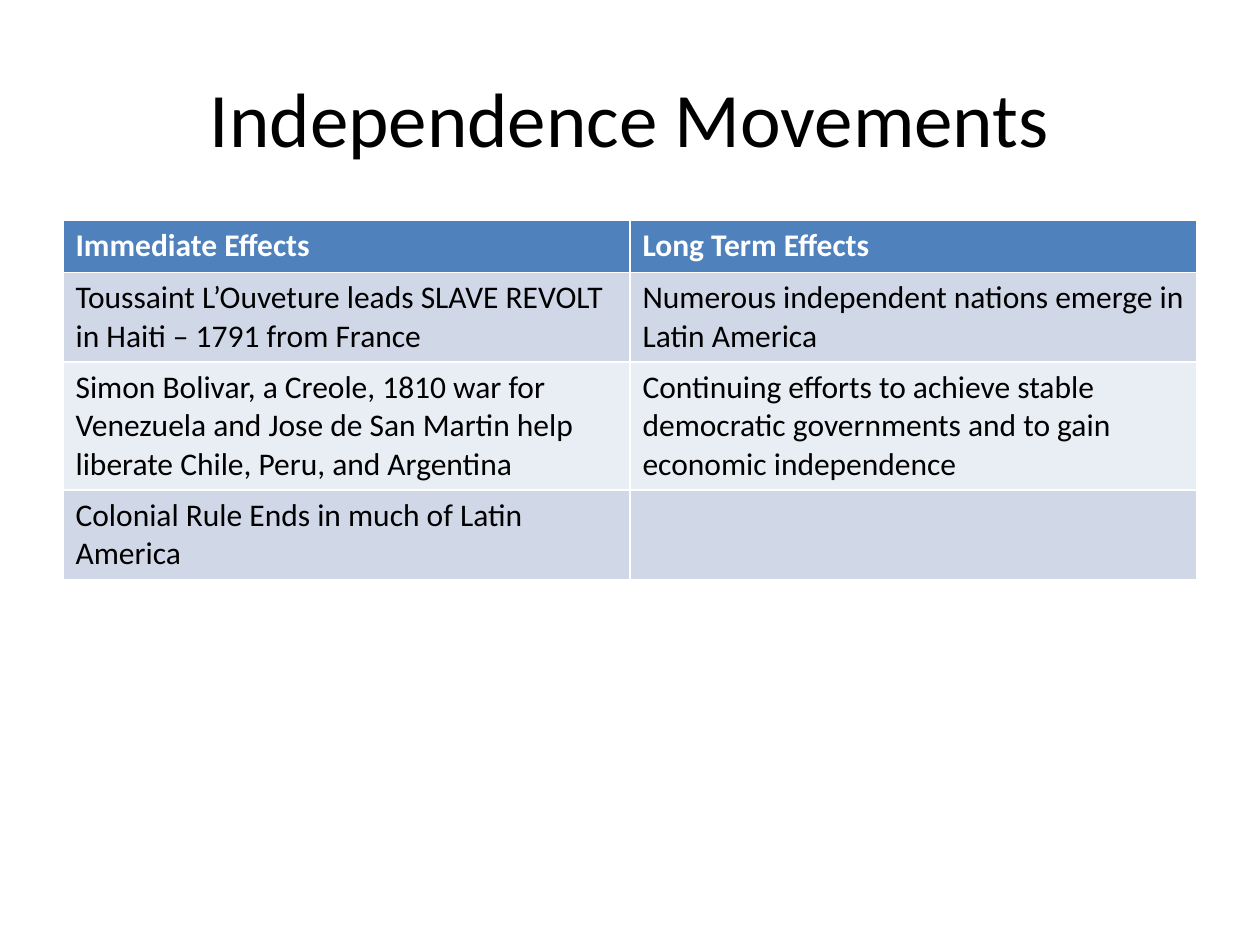
from pptx import Presentation
from pptx import util as u
from pptx.dml.color import RGBColor
from pptx.enum import text

HUES = {"head": "4F81BD", "odd": "D0D8E8", "even": "E9EDF4",
        "ink": "000000", "white": "FFFFFF"}
ROWS = [
    ("Immediate Effects", "Long Term Effects"),
    ("Toussaint L’Ouveture leads SLAVE REVOLT in Haiti – 1791 from France",
     "Numerous independent nations emerge in Latin America"),
    ("Simon Bolivar, a Creole, 1810 war for Venezuela and Jose de San Martin "
     "help liberate Chile, Peru, and Argentina",
     "Continuing efforts to achieve stable democratic governments and to gain "
     "economic independence"),
    ("Colonial Rule Ends in much of Latin America", ""),
]


def hue(name):
    return RGBColor.from_string(HUES[name])


def write(frame, words, size=18, color="ink", bold=False,
          align=text.PP_ALIGN.LEFT):
    para = frame.paragraphs[0]
    para.alignment = align
    para.font.size = u.Pt(size)
    if words:
        run = para.add_run()
        run.text = words
        font = run.font
        font.name, font.size, font.bold = "Calibri", u.Pt(size), bold
        font.color.rgb = hue(color)


def add_title(slide, box, words):
    title = slide.shapes.title
    title.left, title.top, title.width, title.height = box
    title.text_frame.vertical_anchor = text.MSO_ANCHOR.MIDDLE
    write(title.text_frame, words, size=44, align=text.PP_ALIGN.CENTER)


def add_grid(slide, box, rows):
    """Table whose rows grow to fit; its built-in style draws the white rules."""
    left, top, width, height = box
    grid = slide.shapes.add_table(len(rows), len(rows[0]), *box).table
    for col in grid.columns:
        col.width = width // len(rows[0])
    for i, row in enumerate(rows):
        grid.rows[i].height = height // len(rows)
        head = i == 0
        fill = "head" if head else "odd" if i % 2 else "even"
        for j, words in enumerate(row):
            cell = grid.cell(i, j)
            cell.fill.solid()
            cell.fill.fore_color.rgb = hue(fill)
            write(cell.text_frame, words, bold=head,
                  color="white" if head else "ink")


def main():
    deck = Presentation()
    deck.slide_width, deck.slide_height = u.Inches(10), u.Inches(7.5)
    wide, high = deck.slide_width, deck.slide_height

    def area(top, tall):
        """Box within the side margins, from shares of the slide's height."""
        return (int(wide * 0.05), int(high * top),
                int(wide * 0.9), int(high * tall))

    slide = deck.slides.add_slide(deck.slide_layouts[5])
    add_title(slide, area(0.04, 1 / 6), "Independence Movements")
    add_grid(slide, area(7 / 30, 0.22), ROWS)
    deck.save("out.pptx")


if __name__ == "__main__":
    main()
